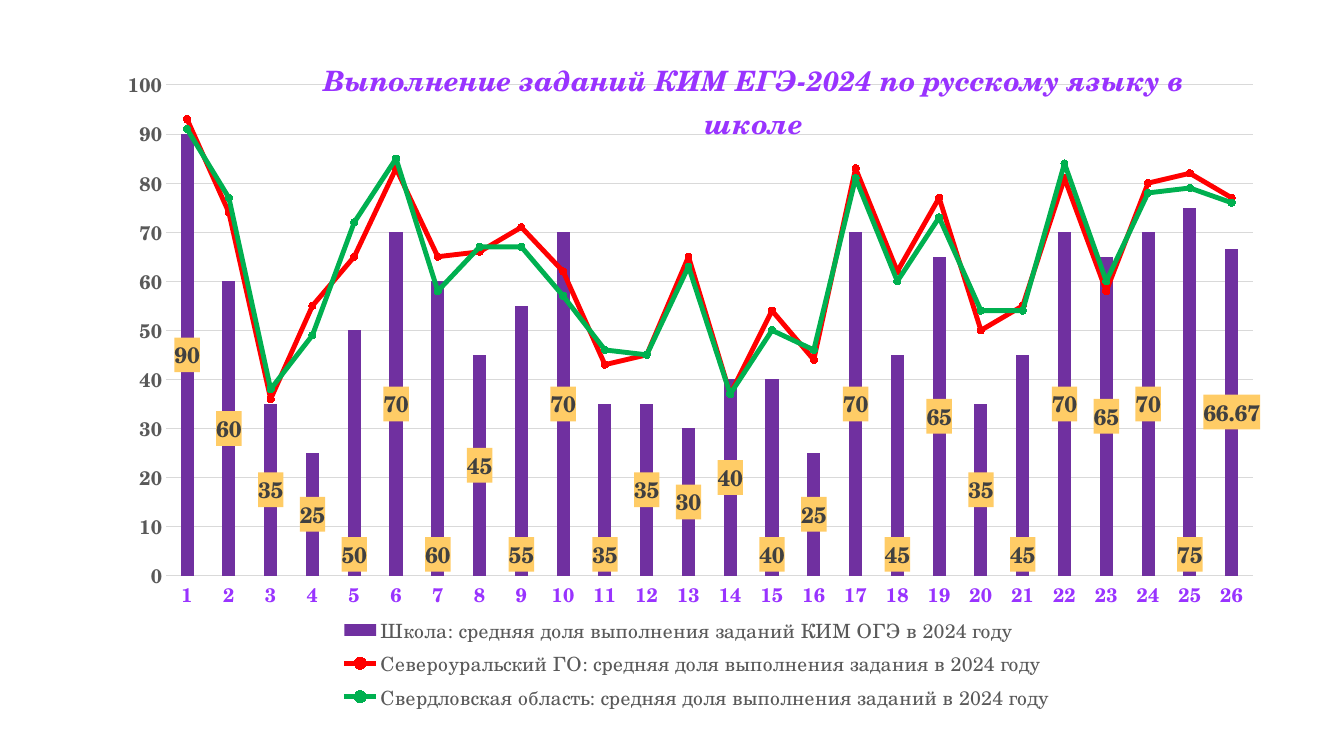
from lxml import etree
from pptx import Presentation
from pptx.chart.data import CategoryChartData
from pptx.dml.color import RGBColor
from pptx.enum.chart import XL_CHART_TYPE as ChartType, XL_LABEL_POSITION as LabelPos
from pptx.enum.chart import XL_LEGEND_POSITION as LegendPos, XL_MARKER_STYLE as Marker
from pptx.enum.chart import XL_TICK_MARK as Tick
from pptx.oxml import parse_xml
from pptx.oxml.ns import nsdecls, qn
from pptx.util import Cm, Pt

# Colours and font
PURPLE = RGBColor(0x70, 0x30, 0xA0)
VIOLET = RGBColor(0x99, 0x33, 0xFF)
RED = RGBColor(0xFF, 0x00, 0x00)
GREEN = RGBColor(0x00, 0xB0, 0x50)
ORANGE = RGBColor(0xED, 0x7D, 0x31)
SILVER = RGBColor(0xA5, 0xA5, 0xA5)
LABEL_FILL = RGBColor(0xFF, 0xCC, 0x66)
DARK = RGBColor(0x40, 0x40, 0x40)
GREY = RGBColor(0x59, 0x59, 0x59)
GRID = RGBColor(0xD9, 0xD9, 0xD9)
BLACK = RGBColor(0, 0, 0)
SERIF = "TeX Gyre Schola"

# Content
TITLE = "Выполнение заданий КИМ ЕГЭ-2024 по русскому языку в школе"
RESULTS = {
    "Школа: средняя доля выполнения заданий КИМ ОГЭ в 2024 году": [
        90, 60, 35, 25, 50, 70, 60, 45, 55, 70, 35, 35, 30,
        40, 40, 25, 70, 45, 65, 35, 45, 70, 65, 70, 75, 66.67],
    "Североуральский ГО: средняя доля выполнения задания в 2024 году": [
        93, 74, 36, 55, 65, 83, 65, 66, 71, 62, 43, 45, 65,
        37, 54, 44, 83, 62, 77, 50, 55, 81, 58, 80, 82, 77],
    "Свердловская область: средняя доля выполнения заданий в 2024 году": [
        91, 77, 38, 49, 72, 85, 58, 67, 67, 57, 46, 45, 63,
        37, 50, 46, 81, 60, 73, 54, 54, 84, 60, 78, 79, 76],
}
TASKS_LABELLED_AT_BASE = [5, 7, 9, 11, 15, 18, 21, 25]
LINE_COLOURS = [(RED, ORANGE), (GREEN, SILVER)]

# Text formats
TITLE_TEXT = {"name": SERIF, "size": Pt(20), "bold": True, "italic": True}
AXIS_TEXT = {"name": SERIF, "size": Pt(14), "bold": True}
LEGEND_TEXT = {"name": SERIF, "size": Pt(14), "bold": False}
LABEL_TEXT = {"name": SERIF, "size": Pt(16), "bold": True}


def set_font(font, text_format, colour):
    for attribute, value in text_format.items():
        setattr(font, attribute, value)
    font.color.rgb = colour


def place(parent, position, **settings):
    """Give a chart part a manual layout as its child at this position."""
    for old in parent.findall(qn("c:layout")):
        parent.remove(old)
    layout = parse_xml(f"<c:layout {nsdecls('c')}><c:manualLayout/></c:layout>")
    for tag, value in settings.items():
        etree.SubElement(layout[0], qn(f"c:{tag}")).set("val", str(value))
    parent.insert(position, layout)


def fill_label(text_properties):
    label = text_properties.getparent()
    for old in label.findall(qn("c:spPr")):
        label.remove(old)
    text_properties.addprevious(parse_xml(
        f"<c:spPr {nsdecls('c', 'a')}><a:solidFill>"
        f'<a:srgbClr val="{LABEL_FILL}"/></a:solidFill></c:spPr>'))


# Slide and chart
prs = Presentation()
prs.slide_width, prs.slide_height = Cm(33.87), Cm(19.05)
slide = prs.slides.add_slide(prs.slide_layouts[6])
results = CategoryChartData()
results.categories = [str(task) for task in range(1, 27)]
for name, shares in RESULTS.items():
    results.add_series(name, shares)
chart = slide.shapes.add_chart(ChartType.COLUMN_CLUSTERED, Cm(3.12), Cm(0.76),
                               Cm(28.88), Cm(17.27), results).chart
set_font(chart.font, {"name": "Calibri", "size": Pt(10)}, BLACK)

# Title over the plot
chart.has_title = True
heading = chart.chart_title.text_frame.paragraphs[0].add_run()
heading.text = TITLE
set_font(heading.font, TITLE_TEXT, VIOLET)
title = chart.chart_title._element
place(title, 1, xMode="edge", yMode="edge", x=0.17, y=0.03)
for overlay in title.findall(qn("c:overlay")):
    title.remove(overlay)
title.find(qn("c:layout")).addnext(
    parse_xml(f'<c:overlay {nsdecls("c")} val="1"/>'))

# Plot area, with the two regional series moved to a line chart
bars = chart.plots[0]
bars.gap_width, bars.overlap, bars.vary_by_categories = 219, -27, False
bar_chart = bars._element
plot_area = bar_chart.getparent()
place(plot_area, 0, layoutTarget="inner", xMode="edge", yMode="edge",
      x=0.037, y=0.08, w=0.948, h=0.716)
line_chart = parse_xml(
    f'<c:lineChart {nsdecls("c")}><c:grouping val="standard"/>'
    '<c:varyColors val="0"/><c:marker val="1"/></c:lineChart>')
for series in bar_chart.findall(qn("c:ser"))[1:]:
    for bar_setting in series.findall(qn("c:invertIfNegative")):
        series.remove(bar_setting)
    line_chart.find(qn("c:marker")).addprevious(series)
for axis_id in bar_chart.findall(qn("c:axId")):
    etree.SubElement(line_chart, qn("c:axId")).set("val", axis_id.get("val"))
bar_chart.addnext(line_chart)

# School columns and their labels
school = bars.series[0]
school.format.fill.solid()
school.format.fill.fore_color.rgb = PURPLE
labels = school.data_labels
labels.show_value, labels.position = True, LabelPos.CENTER
set_font(labels.font, LABEL_TEXT, DARK)
for task in TASKS_LABELLED_AT_BASE:
    label = school.points[task - 1].data_label
    set_font(label.font, LABEL_TEXT, DARK)
    label.position = LabelPos.INSIDE_BASE
for text_properties in list(labels._element.iter(qn("c:txPr"))):
    fill_label(text_properties)

# Regional lines
for region, (colour, marker_fill) in zip(chart.plots[1].series, LINE_COLOURS):
    region.smooth = False
    region.format.line.color.rgb = colour
    region.format.line.width = Pt(3.5)
    marker = region.marker
    marker.style, marker.size = Marker.CIRCLE, 5
    marker.format.fill.solid()
    marker.format.fill.fore_color.rgb = marker_fill
    marker.format.line.color.rgb = colour

# Axes
tasks, percent = chart.category_axis, chart.value_axis
for axis, colour in ((tasks, VIOLET), (percent, GREY)):
    axis.major_tick_mark = axis.minor_tick_mark = Tick.NONE
    set_font(axis.tick_labels.font, AXIS_TEXT, colour)
percent.minimum_scale, percent.maximum_scale, percent.major_unit = 0, 100, 10
percent.has_major_gridlines = True
percent.format.line.fill.background()
for line in (tasks.format.line, percent.major_gridlines.format.line):
    line.color.rgb = GRID
    line.width = Pt(0.75)

# Legend
chart.has_legend = True
chart.legend.position = LegendPos.BOTTOM
chart.legend.include_in_layout = False
set_font(chart.legend.font, LEGEND_TEXT, GREY)

prs.save("out.pptx")
